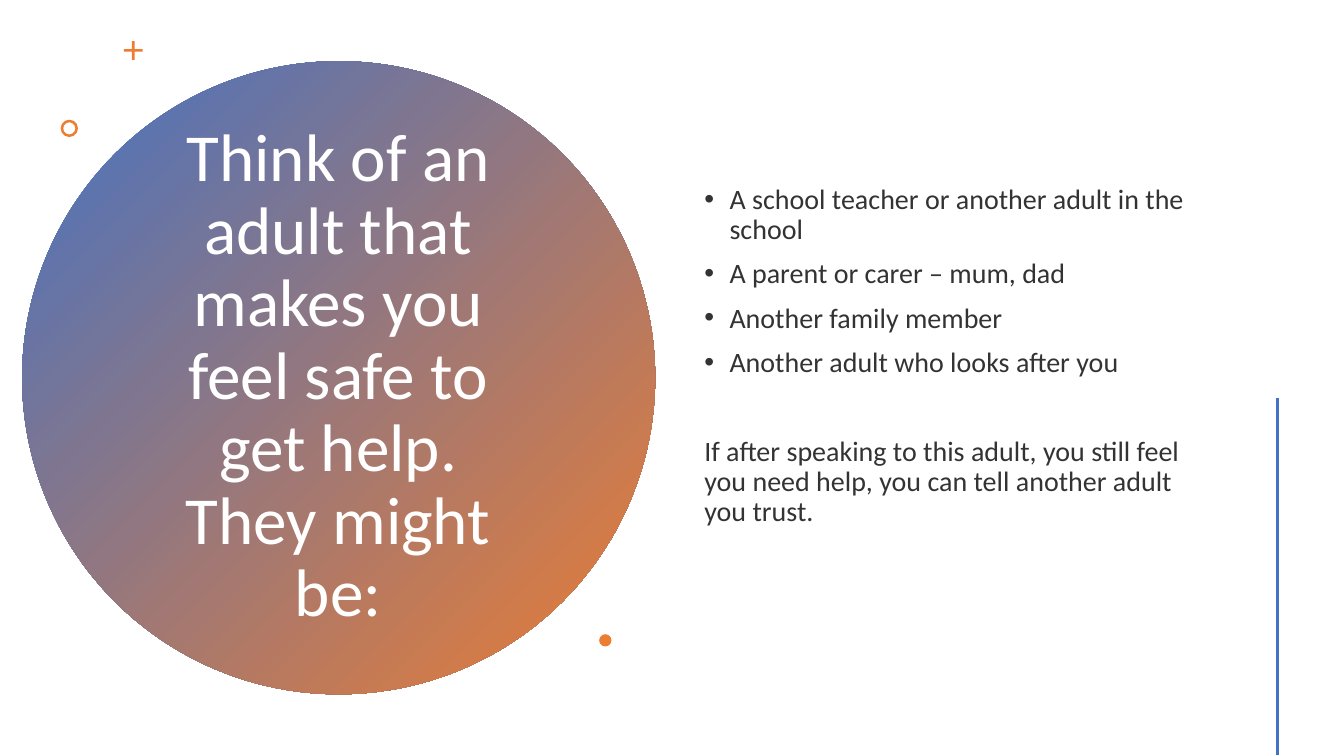
from dataclasses import dataclass

from lxml import etree
from pptx import Presentation
from pptx.dml.color import RGBColor
from pptx.enum import shapes, text
from pptx.oxml.ns import qn
from pptx.util import Pt


@dataclass(frozen=True)
class Theme:
    font: str = "Calibri"
    blue: str = "4472C4"
    orange: str = "ED7D31"
    white: str = "FFFFFF"
    ink: str = "333333"
    head: int = 48
    body: int = 20
    rule: int = 2


class Page:
    def __init__(self, deck, theme):
        self.theme = theme
        self.slide = deck.slides.add_slide(deck.slide_layouts[5])

    def style(self, para, size, color):
        para.line_spacing = 0.9
        for run in para.runs:
            run.font.name = self.theme.font
            run.font.size = Pt(size)
            run.font.color.rgb = RGBColor.from_string(color)

    def frame(self, shape):
        frame = shape.text_frame
        frame.word_wrap = True
        frame.auto_size = text.MSO_AUTO_SIZE.NONE
        frame.vertical_anchor = text.MSO_ANCHOR.MIDDLE
        return frame

    def title(self, words, x, y, w, h):
        shape = self.slide.shapes.title
        shape.left, shape.top, shape.width, shape.height = map(Pt, (x, y, w, h))
        frame = self.frame(shape)
        frame.text = words
        para = frame.paragraphs[0]
        para.alignment = text.PP_ALIGN.CENTER
        self.style(para, self.theme.head, self.theme.white)

    def shape(self, kind, x, y, w, h):
        shape = self.slide.shapes.add_shape(kind, *map(Pt, (x, y, w, h)))
        shape.shadow.inherit = False
        shape.fill.solid()
        shape.fill.fore_color.rgb = RGBColor.from_string(self.theme.orange)
        shape.line.fill.background()
        return shape

    def disc(self, x, y, size):
        disc = self.shape(shapes.MSO_SHAPE.OVAL, x, y, size, size)
        disc.fill.gradient()
        disc.fill.gradient_angle = 315
        for stop, color in zip(disc.fill.gradient_stops, (self.theme.blue, self.theme.orange)):
            stop.color.rgb = RGBColor.from_string(color)
        self.slide.shapes.title.element.addprevious(disc.element)

    def mark(self, kind, x, y, size, ratio=None):
        mark = self.shape(kind, x, y, size, size)
        if ratio is not None:
            mark.adjustments[0] = ratio

    def bullet(self, para):
        props = para._p.get_or_add_pPr()
        props.set("marL", str(Pt(18)))
        props.set("indent", str(-Pt(18)))
        etree.SubElement(props, qn("a:buFont")).set("typeface", "Arial")
        etree.SubElement(props, qn("a:buChar")).set("char", "•")

    def body(self, items, note, x, y, w, h):
        frame = self.frame(self.slide.shapes.add_textbox(*map(Pt, (x, y, w, h))))
        frame.margin_bottom = Pt(35.6)
        frame.text = "\n".join([*items, note])
        *points, last = frame.paragraphs
        for para in frame.paragraphs:
            self.style(para, self.theme.body, self.theme.ink)
            para.space_before = Pt(10)
        for para in points:
            self.bullet(para)
        last.space_before = Pt(42)

    def line(self, x, top, end):
        line = self.slide.shapes.add_connector(
            shapes.MSO_CONNECTOR.STRAIGHT, *map(Pt, (x, top, x, end)))
        line.line.color.rgb = RGBColor.from_string(self.theme.blue)
        line.line.width = Pt(self.theme.rule)
        etree.SubElement(line.element.spPr, qn("a:effectLst"))


def main():
    deck = Presentation()
    deck.slide_width, deck.slide_height = Pt(960), Pt(540)
    page = Page(deck, Theme())
    page.title("Think of an adult that makes you feel safe to get help. They might be:",
               97.9, 101.5, 287.3, 336.2)
    page.disc(15.8, 43.7, 452.2)
    page.mark(shapes.MSO_SHAPE.CROSS, 88.5, 29.3, 13.4, 0.43)
    page.mark(shapes.MSO_SHAPE.DONUT, 43.3, 85.5, 12.4, 0.15)
    page.body(["A school teacher or another adult in the school",
               "A parent or carer – mum, dad",
               "Another family member",
               "Another adult who looks after you"],
              "If after speaking to this adult, you still feel you need help, "
              "you can tell another adult you trust.",
              496, 41, 375.8, 459.4)
    page.mark(shapes.MSO_SHAPE.OVAL, 428, 453, 8.8)
    page.line(912.4, 284, 539.5)
    deck.save("out.pptx")


if __name__ == "__main__":
    main()
